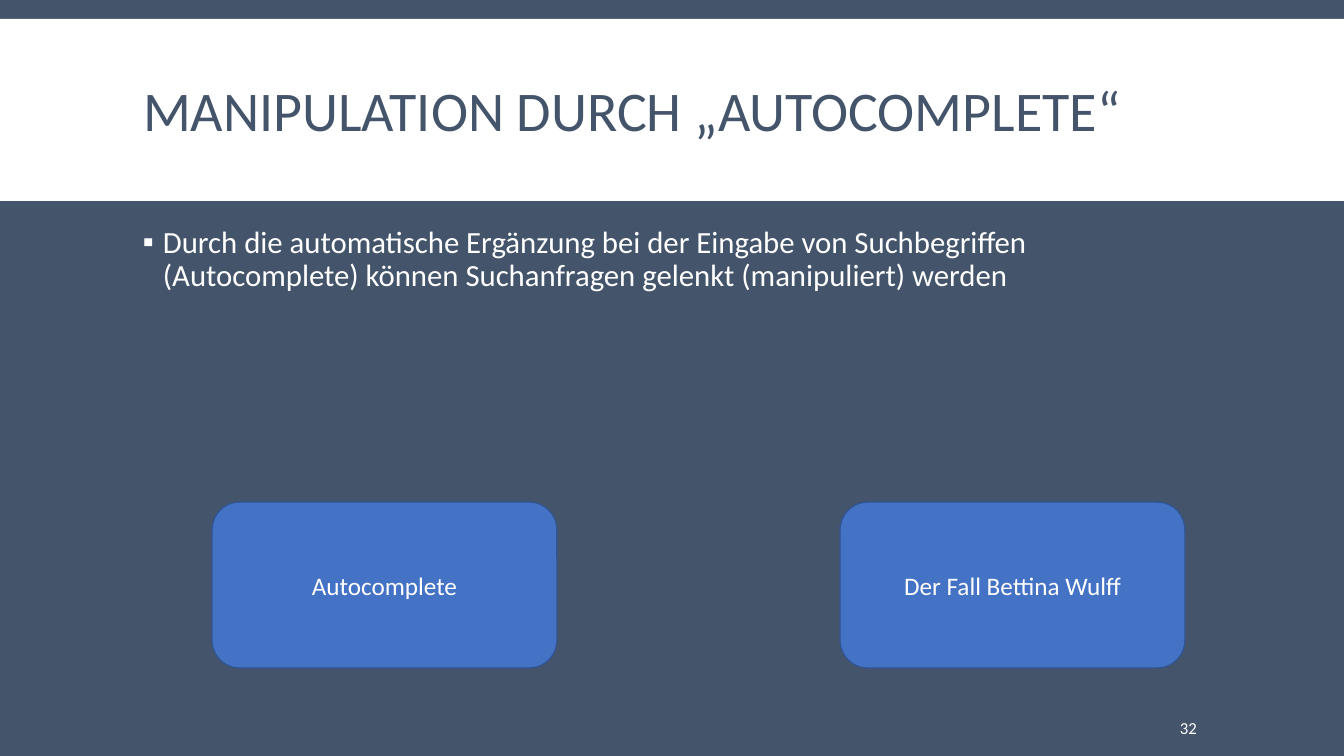
from lxml.etree import SubElement
from pptx import Presentation
from pptx.dml.color import RGBColor
from pptx.enum.shapes import MSO_SHAPE as Shape
from pptx.enum.text import MSO_ANCHOR as Anchor, PP_ALIGN as Align
from pptx.oxml.ns import qn
from pptx.util import Pt

# Content
TITLE = "MANIPULATION DURCH „AUTOCOMPLETE“"
POINT = ("Durch die automatische Ergänzung bei der Eingabe von Suchbegriffen "
         "(Autocomplete) können Suchanfragen gelenkt (manipuliert) werden")
TOPICS = ["Autocomplete", "Der Fall Bettina Wulff"]
NUMBER = "32"

# Style
FONT = "Calibri"
SLATE = RGBColor(0x44, 0x54, 0x6A)
WHITE = RGBColor(0xFF, 0xFF, 0xFF)
BLUE = RGBColor(0x44, 0x72, 0xC4)
EDGE = RGBColor(0x32, 0x54, 0x91)

# Layout in px
SCALE = 914400 / 100.8
WIDE, HIGH = 1344, 756
LEFT, SPAN = 133, 1079
CARD_X, CARD_Y, CARD_W, CARD_H, STEP = 212, 502, 345, 166, 628


def emu(*px):
    return [round(n * SCALE) for n in px]


def write(shape, text, size, color, anchor=Anchor.MIDDLE, align=Align.LEFT):
    frame = shape.text_frame
    frame.word_wrap = True
    frame.vertical_anchor = anchor
    frame.text = text
    para = frame.paragraphs[0]
    para.alignment = align
    font = para.runs[0].font
    font.name, font.size, font.color.rgb = FONT, Pt(size), color
    return para


def block(kind, box, fill):
    shape = slide.shapes.add_shape(kind, *emu(*box))
    shape.shadow.inherit = False
    shape.fill.solid()
    shape.fill.fore_color.rgb = fill
    return shape


deck = Presentation()
deck.slide_width, deck.slide_height = emu(WIDE, HIGH)
slide = deck.slides.add_slide(deck.slide_layouts[5])
back = slide.background.fill
back.solid()
back.fore_color.rgb = SLATE

# White band behind the title
band = block(Shape.RECTANGLE, (0, 19, WIDE, 182), WHITE)
band.line.fill.background()
slide.shapes._spTree.insert(2, band._element)

# Title
title = slide.shapes.title
title.left, title.top, title.width, title.height = emu(LEFT, 31, SPAN, 166)
write(title, TITLE, 40, SLATE).line_spacing = 0.85

# Bullet point
body = slide.shapes.add_textbox(*emu(LEFT, 222, SPAN, 464))
para = write(body, POINT, 22, WHITE, Anchor.TOP)
para.line_spacing = 0.9
para.space_before, para.space_after = Pt(12), Pt(2)
props = para._p.get_or_add_pPr()
indent, = emu(20)
props.set("marL", str(indent))
props.set("indent", str(-indent))
tint = SubElement(props, qn("a:buClr"))
SubElement(tint, qn("a:srgbClr"), val=str(WHITE))
SubElement(props, qn("a:buFont"), typeface=FONT)
SubElement(props, qn("a:buChar"), char="▪")

# Topic cards
for i, topic in enumerate(TOPICS):
    card = block(Shape.ROUNDED_RECTANGLE,
                 (CARD_X + i * STEP, CARD_Y, CARD_W, CARD_H), BLUE)
    card.line.color.rgb = EDGE
    card.line.width = Pt(1)
    write(card, topic, 18, WHITE, align=Align.CENTER)

# Slide number
page = slide.shapes.add_textbox(*emu(1175, 708, 104, 40))
page.text_frame.margin_left, = emu(5)
write(page, NUMBER, 12, WHITE)

deck.save("out.pptx")
